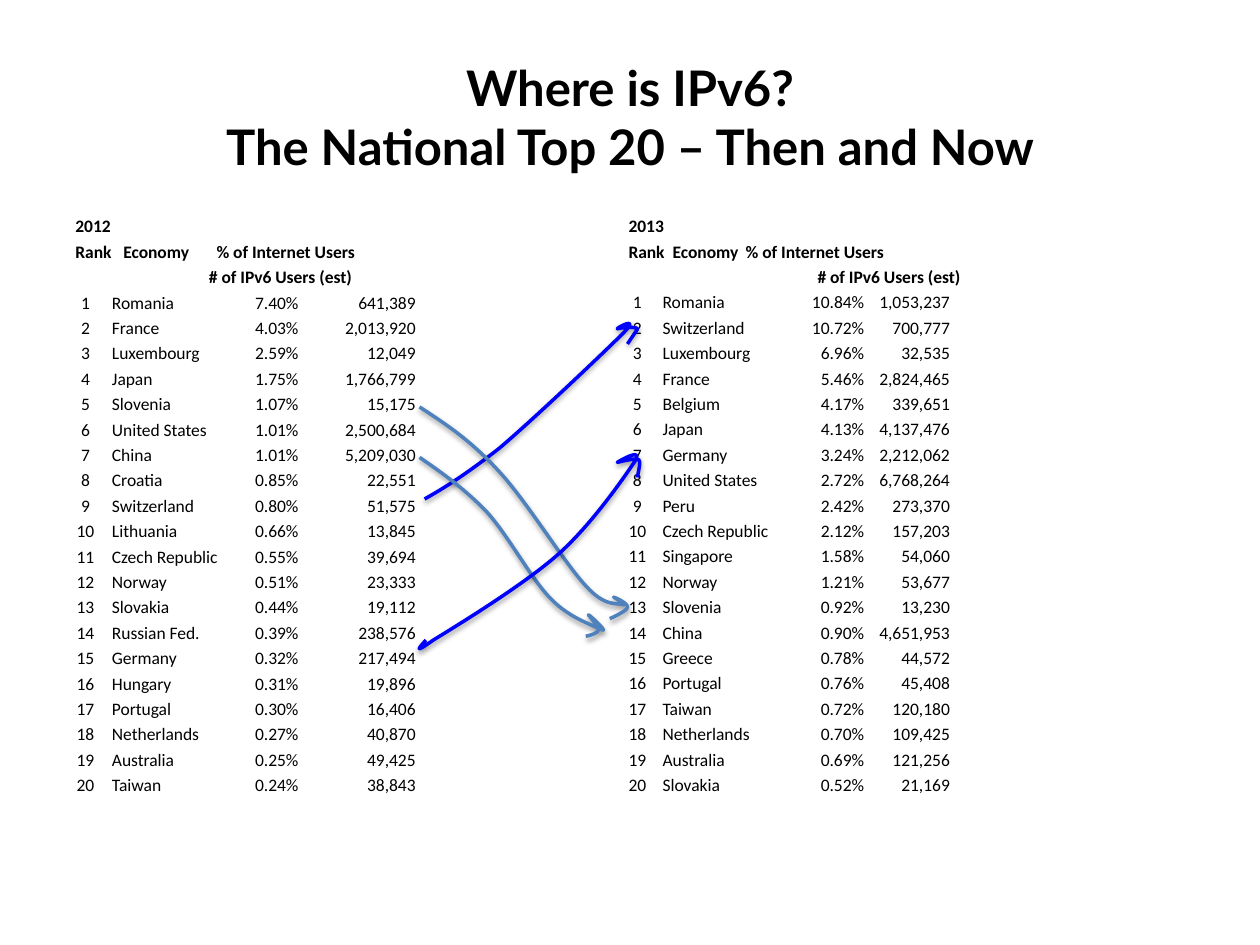
from lxml.etree import SubElement
from pptx import Presentation
from pptx.dml.color import RGBColor
from pptx.enum.text import MSO_ANCHOR, PP_ALIGN
from pptx.oxml.ns import qn
from pptx.util import Inches, Pt

# The slide is a grid of 1000 columns and 750 rows
COLS, ROWS = 1000, 750
UNIT = Inches(10) // COLS
HUES = {"text": "000000", "rise": "0000FF", "fall": "4F81BD"}

TITLE = "Where is IPv6?\vThe National Top 20 – Then and Now"
USERS, COUNT = "% of Internet Users", "# of IPv6 Users (est)"

THEN = """Romania 7.40% 641,389
France 4.03% 2,013,920
Luxembourg 2.59% 12,049
Japan 1.75% 1,766,799
Slovenia 1.07% 15,175
United States 1.01% 2,500,684
China 1.01% 5,209,030
Croatia 0.85% 22,551
Switzerland 0.80% 51,575
Lithuania 0.66% 13,845
Czech Republic 0.55% 39,694
Norway 0.51% 23,333
Slovakia 0.44% 19,112
Russian Fed. 0.39% 238,576
Germany 0.32% 217,494
Hungary 0.31% 19,896
Portugal 0.30% 16,406
Netherlands 0.27% 40,870
Australia 0.25% 49,425
Taiwan 0.24% 38,843"""

NOW = """Romania 10.84% 1,053,237
Switzerland 10.72% 700,777
Luxembourg 6.96% 32,535
France 5.46% 2,824,465
Belgium 4.17% 339,651
Japan 4.13% 4,137,476
Germany 3.24% 2,212,062
United States 2.72% 6,768,264
Peru 2.42% 273,370
Czech Republic 2.12% 157,203
Singapore 1.58% 54,060
Norway 1.21% 53,677
Slovenia 0.92% 13,230
China 0.90% 4,651,953
Greece 0.78% 44,572
Portugal 0.76% 45,408
Taiwan 0.72% 120,180
Netherlands 0.70% 109,425
Australia 0.69% 121,256
Slovakia 0.52% 21,169"""

# Each list: box (left, top, width, height), year, rows, then tab stops
# for the two header lines and for the ranked rows
LISTS = [
    ((50, 166, 459, 482), "2012", THEN,
     [(38, "l"), (112, "l")], [(106, "l")],
     [(8, "ctr"), (29, "l"), (177, "r"), (270, "r")]),
    ((489, 166, 500, 474), "2013", NOW,
     [(35, "l"), (93, "l")], [(150, "l")],
     [(7, "ctr"), (27, "l"), (187, "r"), (255, "r")]),
]

# Each arrow: colour, box, start point, then three points per Bézier piece;
# a single point left at the end is a straight line
ARROWS = [
    # Switzerland, 9 to 2
    ("rise", (337, 257, 169, 139),
     [(337, 396), (353, 387), (369, 377), (396, 356),
      (422, 334), (478, 281), (494, 265),
      (510, 249), (488, 261), (490, 261),
      (492, 260), (505, 259), (506, 261),
      (498, 273)]),
    # Slovenia, 5 to 13
    ("fall", (333, 323, 166, 168),
     [(333, 323), (353, 336), (373, 349), (395, 373),
      (417, 396), (448, 447), (465, 465),
      (481, 483), (491, 478), (495, 480),
      (498, 481), (486, 473), (487, 474),
      (488, 474), (499, 479), (498, 482),
      (498, 485), (484, 491), (484, 491)]),
    # China, 7 to 14
    ("fall", (333, 363, 146, 141),
     [(333, 363), (352, 376), (370, 389), (387, 407),
      (404, 426), (422, 460), (437, 475),
      (452, 491), (473, 497), (478, 500),
      (483, 502), (468, 488), (467, 488),
      (467, 488), (475, 497), (475, 500),
      (475, 502), (470, 504), (465, 505)]),
    # Germany, 15 to 7
    ("rise", (333, 361, 175, 154),
     [(338, 508), (333, 514), (327, 520), (344, 508),
      (362, 497), (416, 464), (443, 440),
      (470, 416), (496, 378), (504, 366),
      (511, 354), (490, 367), (490, 367),
      (491, 367), (504, 363), (507, 365),
      (509, 367), (506, 376), (506, 379)]),
]


def hue(name):
    return RGBColor.from_string(HUES[name])


def style(para, face, size, bold):
    for run in para.runs:
        font = run.font
        font.name, font.size, font.bold = face, Pt(size), bold
        font.color.rgb = hue("text")


def add_box(slide, box):
    frame = slide.shapes.add_textbox(*(n * UNIT for n in box)).text_frame
    frame.word_wrap = True
    return frame


def add_title(slide):
    frame = add_box(slide, (50, 30, 900, 125))
    frame.vertical_anchor = MSO_ANCHOR.MIDDLE
    para = frame.paragraphs[0]
    para.text = TITLE
    para.alignment = PP_ALIGN.CENTER
    style(para, "Lato", 28, True)


def set_tabs(para, stops):
    tabs = SubElement(para._p.get_or_add_pPr(), qn("a:tabLst"))
    for col, side in stops:
        SubElement(tabs, qn("a:tab"), pos=str(col * UNIT), algn=side)


def add_list(slide, box, year, data, head, sub, body):
    lines = [(year, [], True),
             (f"Rank\tEconomy\t{USERS}", head, True),
             (f"\t{COUNT}", sub, True)]
    for rank, row in enumerate(data.splitlines(), 1):
        cells = [str(rank), *row.rsplit(" ", 2)]
        lines.append(("\t" + "\t".join(cells), body, False))
    frame = add_box(slide, box)
    for i, (text, stops, bold) in enumerate(lines):
        para = frame.add_paragraph() if i else frame.paragraphs[0]
        para.text = text
        para.space_before = Pt(2.5)
        if stops:
            set_tabs(para, stops)
        style(para, "Calibri", 10, bold)


def add_step(track, kind, knots, left, top):
    step = SubElement(track, qn(f"a:{kind}"))
    for x, y in knots:
        SubElement(step, qn("a:pt"), x=str(x - left), y=str(y - top))


def add_shade(shape):
    fx = SubElement(shape._element.spPr, qn("a:effectLst"))
    cast = SubElement(fx, qn("a:outerShdw"), blurRad=str(Pt(3.1)),
                      dist=str(Pt(1.6)), dir="5400000", rotWithShape="0")
    tint = SubElement(cast, qn("a:srgbClr"), val=HUES["text"])
    SubElement(tint, qn("a:alpha"), val="38000")


def add_arrow(slide, name, box, knots):
    # Span the box first, then draw the curve inside it
    left, top, width, height = box
    pen = slide.shapes.build_freeform(left, top, scale=UNIT)
    pen.add_line_segments([(left + width, top + height)], close=False)
    shape = pen.convert_to_shape()
    track = next(shape._element.iter(qn("a:path")))
    for step in list(track):
        track.remove(step)
    add_step(track, "moveTo", knots[:1], left, top)
    for i in range(1, len(knots), 3):
        piece = knots[i:i + 3]
        kind = "cubicBezTo" if len(piece) == 3 else "lnTo"
        add_step(track, kind, piece, left, top)
    shape.fill.background()
    shape.line.color.rgb = hue(name)
    shape.line.width = Pt(2)
    add_shade(shape)


def main():
    deck = Presentation()
    deck.slide_width, deck.slide_height = COLS * UNIT, ROWS * UNIT
    slide = deck.slides.add_slide(deck.slide_layouts[6])
    add_title(slide)
    for item in LISTS:
        add_list(slide, *item)
    for item in ARROWS:
        add_arrow(slide, *item)
    deck.save("out.pptx")


if __name__ == "__main__":
    main()
